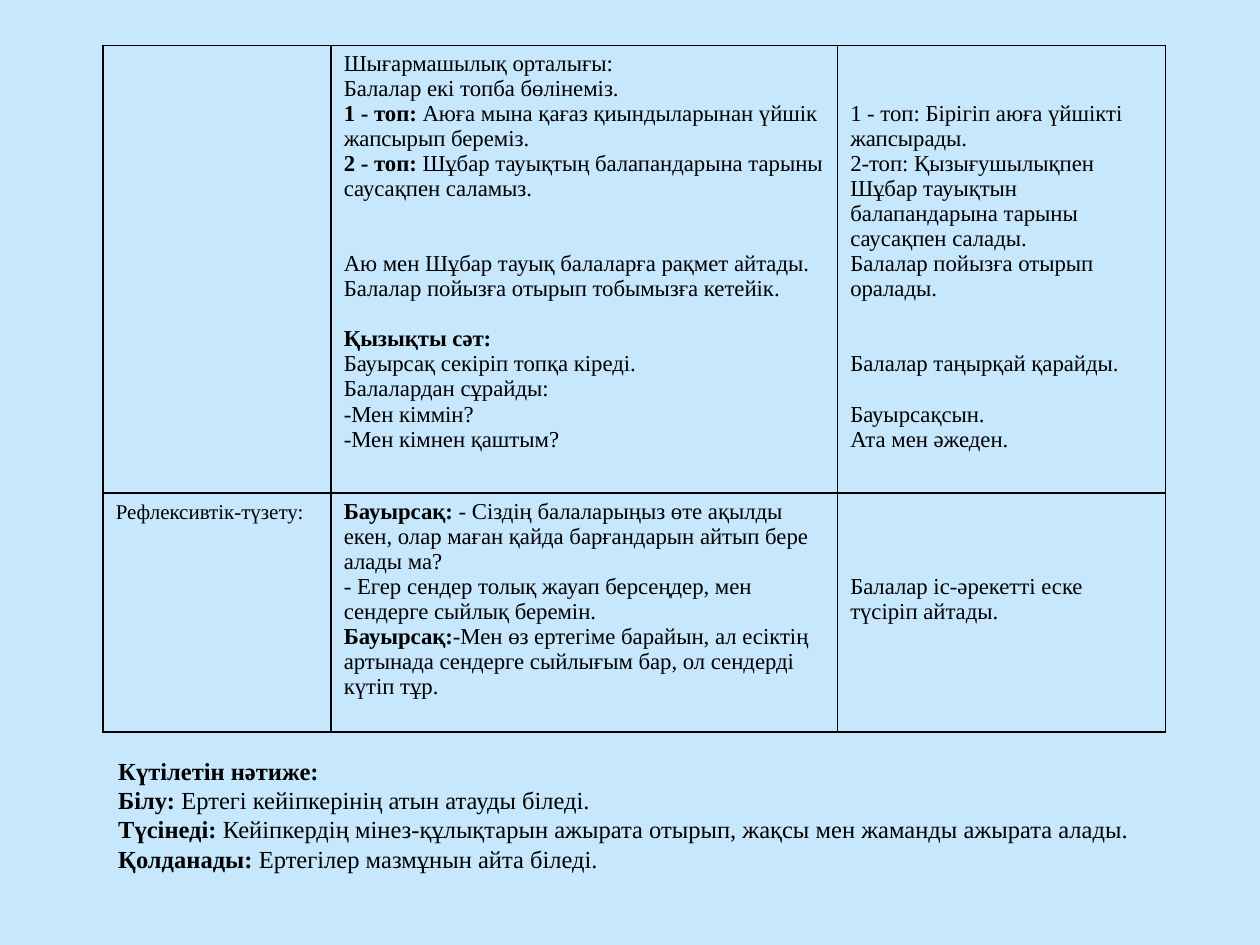
from pptx import Presentation
from pptx.util import Pt
from pptx.dml.color import RGBColor as RGB
from pptx.enum.text import MSO_AUTO_SIZE as Auto
from pptx.oxml import parse_xml
from pptx.oxml.ns import nsdecls

LINE = 14.3
COLS = [130.3, 289.4, 187.3]
ROWS = [255.6, 136.8]
CENTRES = [
    (0, "Шығармашылық орталығы:"),
    (0, "Балалар екі топба бөлінеміз."),
    (0, "*1 - топ: *Аюға мына қағаз қиындыларынан үйшік жапсырып береміз."),
    (0, "*2 - топ: *Шұбар тауықтың балапандарына тарыны саусақпен саламыз."),
    (2, "Аю мен Шұбар тауық балаларға рақмет айтады.\nБалалар пойызға отырып тобымызға кетейік."),
    (1, "*Қызықты сәт:\n*Бауырсақ секіріп топқа кіреді."),
    (0, "Балалардан сұрайды:\n-Мен кіммін?\n-Мен кімнен қаштым?"),
]
CHILDREN = [
    (2, "1 - топ: Бірігіп аюға үйшікті жапсырады."),
    (0, "2-топ: Қызығушылықпен Шұбар тауықтын балапандарына тарыны саусақпен салады."),
    (0, "Балалар пойызға отырып оралады."),
    (2, "Балалар таңырқай қарайды."),
    (1, "Бауырсақсын."),
    (0, "Ата мен әжеден."),
]
REFLECTION = [
    (0, "*Бауырсақ: *- Сіздің балаларыңыз өте ақылды екен, олар маған қайда барғандарын айтып бере "
        "алады ма?\n- Егер сендер толық жауап берсеңдер, мен сендерге сыйлық беремін.\n"
        "*Бауырсақ:*-Мен өз ертегіме барайын, ал есіктің артынада сендерге сыйлығым бар, "
        "ол сендерді күтіп тұр."),
]
CELLS = [
    [(13, []), (13, CENTRES), (13, CHILDREN)],
    [(12, [(0, "Рефлексивтік-түзету:")]), (13, REFLECTION),
     (13, [(3, "Балалар іс-әрекетті еске түсіріп айтады.")])],
]
RESULTS = ("*Күтілетін нәтиже:\nБілу: *Ертегі кейіпкерінің атын атауды біледі.\n"
           "*Түсінеді: *Кейіпкердің мінез-құлықтарын ажырата отырып, жақсы мен жаманды ажырата алады.\n"
           "*Қолданады: *Ертегілер мазмұнын айта біледі.")


def color(value):
    return RGB.from_string(value)


class Deck:
    """Draws text and tables on the current slide in one style."""

    font, ink, paper = "Times New Roman", "000000", "C6E7FC"

    def __init__(self, prs):
        self.s = prs.slides.add_slide(prs.slide_layouts[6])
        fill = self.s.background.fill
        fill.solid()
        fill.fore_color.rgb = color(self.paper)

    def add_runs(self, p, text, size, line):
        p.line_spacing = Pt(line)
        for i, part in enumerate(text.split("*")):
            for j, piece in enumerate(part.split("\n")):
                if j:
                    p.add_line_break()
                if piece:
                    r = p.add_run()
                    r.text = piece
                    r.font.name, r.font.size, r.font.bold = self.font, Pt(size), i % 2 == 1
                    r.font.color.rgb = color(self.ink)

    def borders(self, cell):
        tc_pr = cell._tc.get_or_add_tcPr()
        for n, side in enumerate(("lnL", "lnR", "lnT", "lnB")):
            tc_pr.insert(n, parse_xml(
                f'<a:{side} {nsdecls("a")} w="{Pt(1)}"><a:solidFill>'
                f'<a:srgbClr val="{self.ink}"/></a:solidFill></a:{side}>'))

    def cell(self, cell, size, paragraphs):
        cell.fill.background()
        self.borders(cell)
        tf = cell.text_frame
        for i, (gap, text) in enumerate(paragraphs):
            p = tf.add_paragraph() if i else tf.paragraphs[0]
            if i:
                p.space_before = Pt(gap * LINE)
            else:
                cell.margin_top = Pt(3.6 + gap * LINE)
            self.add_runs(p, text, size, LINE)

    def table(self, x, y, cols, rows, cells):
        frame = self.s.shapes.add_table(len(rows), len(cols), Pt(x), Pt(y), Pt(sum(cols)), Pt(sum(rows)))
        table = frame.table
        table.first_row = table.horz_banding = False
        for col, width in zip(table.columns, cols):
            col.width = Pt(width)
        for i, height in enumerate(rows):
            table.rows[i].height = Pt(height)
            for j, (size, paragraphs) in enumerate(cells[i]):
                self.cell(table.cell(i, j), size, paragraphs)

    def text(self, x, y, w, h, text, size, line):
        tf = self.s.shapes.add_textbox(Pt(x), Pt(y), Pt(w), Pt(h)).text_frame
        tf.word_wrap = True
        tf.auto_size = Auto.SHAPE_TO_FIT_TEXT
        self.add_runs(tf.paragraphs[0], text, size, line)


def main():
    prs = Presentation()
    prs.slide_width, prs.slide_height = Pt(720), Pt(540)
    deck = Deck(prs)
    deck.table(59, 26, COLS, ROWS, CELLS)
    deck.text(60.5, 428.4, 607, 74.9, RESULTS, 14, 16.75)
    prs.save("out.pptx")


if __name__ == "__main__":
    main()
